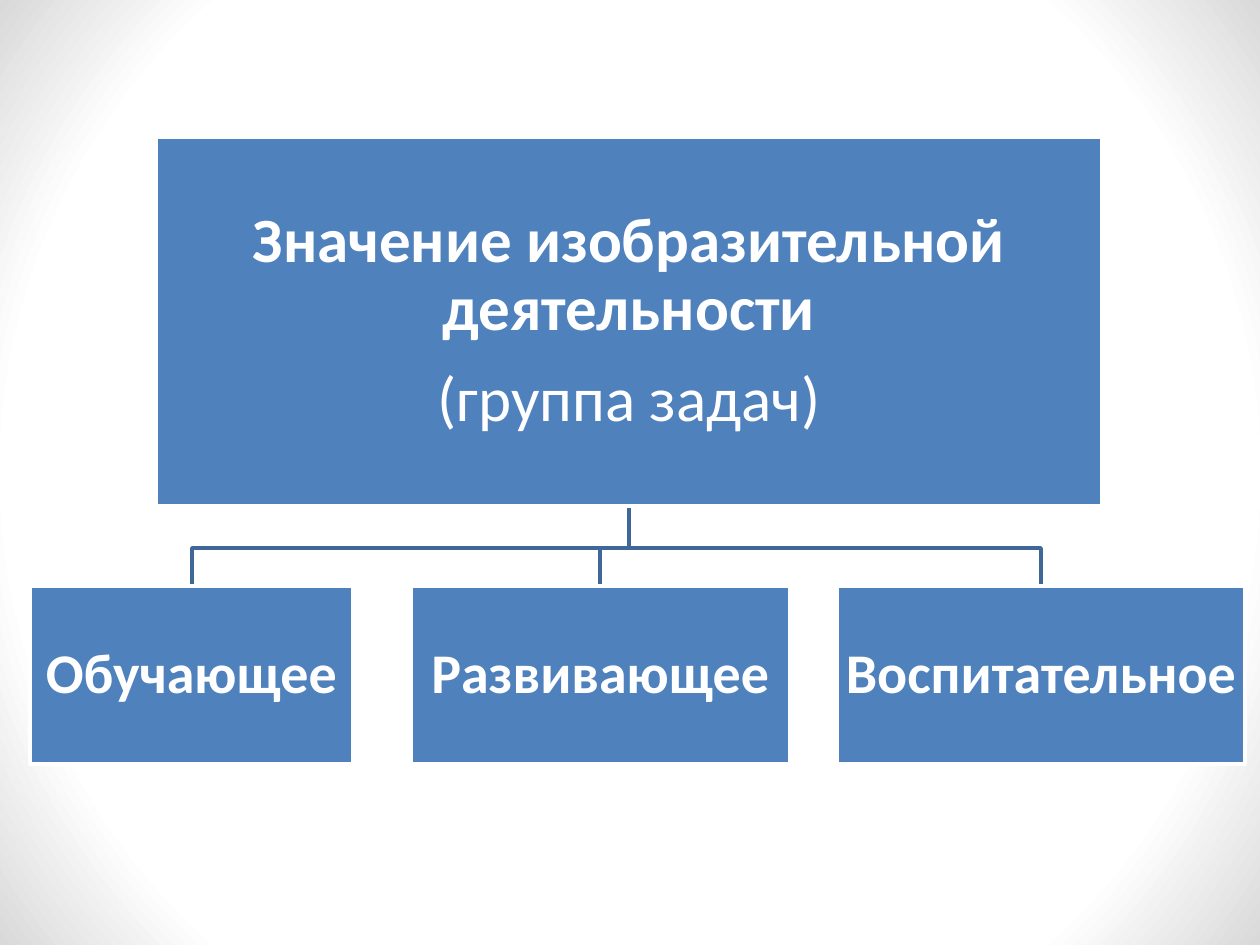
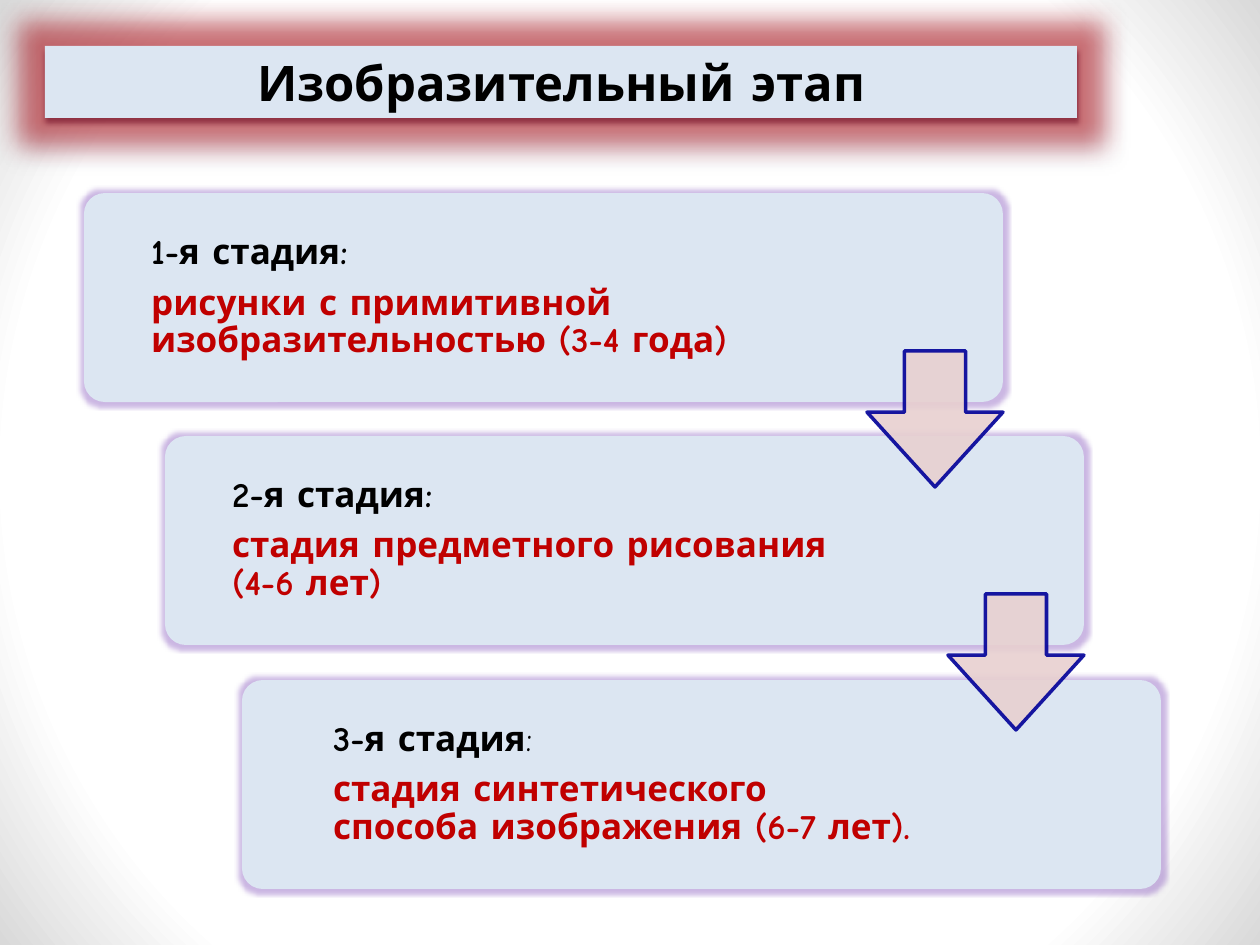
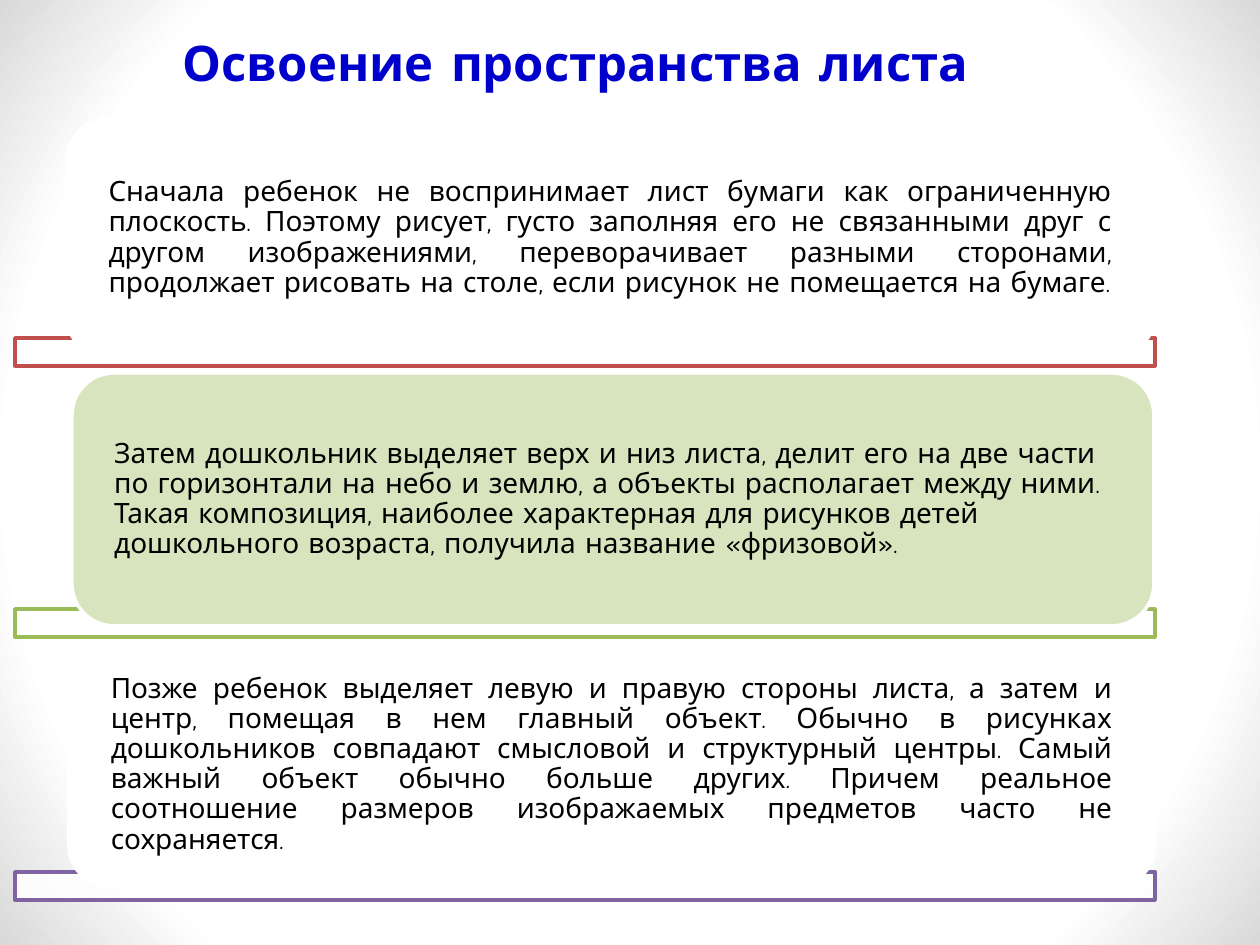
from lxml import etree
from pptx import Presentation
from pptx.dml.color import RGBColor
from pptx.enum.shapes import MSO_SHAPE
from pptx.enum.text import MSO_ANCHOR, MSO_AUTO_SIZE, PP_ALIGN
from pptx.oxml import parse_xml
from pptx.oxml.ns import nsdecls, qn
from pptx.util import Emu, Inches, Pt

RECT, ROUND, ARROW = MSO_SHAPE.RECTANGLE, MSO_SHAPE.ROUNDED_RECTANGLE, MSO_SHAPE.DOWN_ARROW
TOP, MIDDLE = MSO_ANCHOR.TOP, MSO_ANCHOR.MIDDLE
LEFT, CENTER, JUSTIFY = PP_ALIGN.LEFT, PP_ALIGN.CENTER, PP_ALIGN.JUSTIFY
NO_FIT = MSO_AUTO_SIZE.NONE

SCALE = 914400 / 126
TITLE_ONLY, BLANK = 5, 6
BODY_FONT, CHART_FONT = "Comic Neue", "Calibri"
C = {
    "white": "FFFFFF", "edge": "D9D9D9", "black": "000000",
    "blue": "4F81BD", "branch": "3F6797", "pale": "DCE6F2",
    "red": "C00000", "title": "0000CC", "arrow": "E8D0D0", "navy": "000099",
    "glow": "7F4DB9", "shadow": "4F3E64", "green": "D7E4BD",
    "bar_red": "C0504D", "bar_green": "9BBB59", "bar_purple": "8064A2",
}

STAGES = [
    (84, 193, 61, "1-я стадия", True,
     ["рисунки с примитивной", "изобразительностью (3-4 года)"]),
    (165, 436, 61, "2-я стадия", True,
     ["стадия предметного рисования", "(4-6 лет)"]),
    (242, 680, 85, "3-я стадия", False,
     ["стадия синтетического", "способа изображения (6-7 лет)."]),
]
STEPS = [
    ((67, 120, 1087, 236), "white", "bar_red", 338, JUSTIFY,
     "Сначала ребенок не воспринимает лист бумаги как ограниченную плоскость. "
     "Поэтому рисует, густо заполняя его не связанными друг с другом изображениями, "
     "переворачивает разными сторонами, продолжает рисовать на столе, "
     "если рисунок не помещается на бумаге."),
    ((72, 373, 1082, 253), "green", "bar_green", 609, LEFT,
     "Затем дошкольник выделяет верх и низ листа, делит его на две части по горизонтали "
     "на небо и землю, а объекты располагает между ними. Такая композиция, наиболее "
     "характерная для рисунков детей дошкольного возраста, получила название «фризовой»."),
    ((69, 643, 1086, 243), "white", "bar_purple", 872, JUSTIFY,
     "Позже ребенок выделяет левую и правую стороны листа, а затем и центр, помещая в нем "
     "главный объект. Обычно в рисунках дошкольников совпадают смысловой и структурный "
     "центры. Самый важный объект обычно больше других. Причем реальное соотношение "
     "размеров изображаемых предметов часто не сохраняется."),
]


def px(n):
    """Turn pixels into EMU."""
    return Emu(round(n * SCALE))


def rgb(name):
    """Look up a palette colour."""
    return RGBColor.from_string(C[name])


def set_alpha(element, percent):
    """Make every colour below the element partly transparent."""
    for color in element.iter(qn("a:srgbClr")):
        etree.SubElement(color, qn("a:alpha")).set("val", str(percent * 1000))


def add_effect(sp, tag, color, percent, **attrs):
    """Append a glow or shadow to the shape's effect list."""
    effect = etree.SubElement(sp.element.spPr.find(qn("a:effectLst")), qn(tag), attrs)
    etree.SubElement(effect, qn("a:srgbClr")).set("val", C[color])
    set_alpha(effect, percent)


def style(sp, fill=None, line=None):
    """Set a shape's flat fill and two-point outline."""
    sp.shadow.inherit = False
    if fill:
        sp.fill.solid()
        sp.fill.fore_color.rgb = rgb(fill)
    else:
        sp.fill.background()
    if line:
        sp.line.color.rgb = rgb(line)
        sp.line.width = Pt(2)
    else:
        sp.line.fill.background()


def add_box(s, kind, box, fill, line=None, adjust=()):
    """Add a styled preset shape."""
    sp = s.shapes.add_shape(kind, *map(px, box))
    style(sp, fill, line)
    for i, value in enumerate(adjust):
        sp.adjustments[i] = value
    return sp


def set_insets(tf, left, top, right, bottom):
    """Set the text margins."""
    tf.margin_left, tf.margin_top = px(left), px(top)
    tf.margin_right, tf.margin_bottom = px(right), px(bottom)


def format_run(r, font, size, color, bold):
    """Set the run's font."""
    r.font.name, r.font.size, r.font.bold = font, Pt(size), bold
    r.font.color.rgb = rgb(color)


def write(tf, lines, font, size, color, bold=False, align=LEFT):
    """Fill a frame with tightly set paragraphs."""
    tf.word_wrap = True
    tf.vertical_anchor = MIDDLE
    tf.text = "\n".join(lines)
    for p in tf.paragraphs:
        p.alignment = align
        p.line_spacing = 0.9
        for r in p.runs:
            format_run(r, font, size, color, bold)


def set_background(master):
    """Give the master a round gradient that darkens at the corners."""
    master.background.fill.solid()
    solid = master.element.find(".//" + qn("p:bgPr")).find(qn("a:solidFill"))
    gradient = parse_xml(
        f'<a:gradFill {nsdecls("a")} rotWithShape="1"><a:gsLst>'
        f'<a:gs pos="79000"><a:srgbClr val="{C["white"]}"/></a:gs>'
        f'<a:gs pos="100000"><a:srgbClr val="{C["edge"]}"/></a:gs></a:gsLst>'
        '<a:path path="circle"><a:fillToRect l="50000" t="50000" r="50000" b="50000"/>'
        '</a:path></a:gradFill>')
    solid.getparent().replace(solid, gradient)


def add_title(s, text, box, color):
    """Place the slide title in its placeholder."""
    title = s.shapes.title
    title.left, title.top, title.width, title.height = map(px, box)
    tf = title.text_frame
    tf.text = text
    tf.word_wrap, tf.auto_size, tf.vertical_anchor = True, NO_FIT, TOP
    p = tf.paragraphs[0]
    p.alignment = CENTER
    format_run(p.runs[0], BODY_FONT, 28, color, True)
    return title


def add_branch(s, x1, y1, x2, y2):
    """Draw a stepped line from the parent down to a child."""
    bend = y1 + 42
    builder = s.shapes.build_freeform(x1, y1, scale=SCALE)
    builder.add_line_segments([(x1, bend), (x2, bend), (x2, y2)], close=False)
    style(builder.convert_to_shape(), line="branch")


def add_hierarchy(s, box):
    """Draw the parent box with its three children."""
    x, y, w, h = box
    child_y = y + h + 80
    children = [("Обучающее", 30, 323), ("Развивающее", 411, 379),
                ("Воспитательное", 837, 408)]
    for _, left, width in reversed(children):
        add_branch(s, x + w / 2, y + h, left + width / 2, child_y)
    parent = add_box(s, RECT, box, "blue", "white")
    tf = parent.text_frame
    set_insets(tf, 4, 4, 4, 4)
    write(tf, ["Значение изобразительной деятельности", "(группа задач)"],
          CHART_FONT, 36, "white", True, CENTER)
    tf.paragraphs[0].space_after = Pt(12.6)
    tf.paragraphs[1].runs[0].font.bold = False
    for name, left, width in children:
        child = add_box(s, RECT, (left, child_y, width, 178), "blue", "white")
        set_insets(child.text_frame, 3, 3, 3, 3)
        write(child.text_frame, [name], CHART_FONT, 32, "white", True, CENTER)


def add_stage(s, box, inset, heading, bold_colon, lines):
    """Draw one glowing stage card."""
    card = add_box(s, ROUND, box, "pale", adjust=[0.1])
    add_effect(card, "a:glow", "glow", 40, rad=str(Pt(5)))
    tf = card.text_frame
    set_insets(tf, inset, 10, 10, 10)
    write(tf, [heading, *lines], BODY_FONT, 20, "red", True)
    p = tf.paragraphs[0]
    p.space_after = Pt(7)
    p.runs[0].font.color.rgb = rgb("black")
    r = p.add_run()
    r.text = ":"
    format_run(r, BODY_FONT, 20, "black", bold_colon)


def add_stages(s, width, height):
    """Draw the staircase of stages and the arrows between them."""
    for x, y, *content in STAGES:
        add_stage(s, (x, y, width, height), *content)
    size = 136
    for x, y, *_ in STAGES[:-1]:
        arrow = add_box(s, ARROW, (x + width - size, y + 158, size, size),
                        "arrow", "navy", [0.45, 0.55])
        set_alpha(arrow.element.spPr, 90)


def add_step(s, box, fill, bar_color, bar_y, align, text):
    """Draw a text card over its coloured bar."""
    bar = add_box(s, RECT, (15, bar_y, 1140, 28), "white", bar_color)
    set_alpha(bar.element.spPr.find(qn("a:solidFill")), 90)
    card = add_box(s, ROUND, box, fill, "white")
    set_insets(card.text_frame, 30, 0, 30, 0)
    write(card.text_frame, [text], BODY_FONT, 16, "black", align=align)


def hierarchy_slide(prs):
    """Build the slide with the groups of tasks."""
    s = prs.slides.add_slide(prs.slide_layouts[BLANK])
    add_hierarchy(s, (156, 137, 946, 369))


def stages_slide(prs):
    """Build the slide with the drawing stages."""
    s = prs.slides.add_slide(prs.slide_layouts[TITLE_ONLY])
    add_stages(s, 919, 209)
    title = add_title(s, "Изобразительный этап", (45, 46, 1032, 72), "black")
    style(title, "pale")
    add_effect(title, "a:glow", "red", 45, rad=str(Pt(30)))
    add_effect(title, "a:outerShdw", "shadow", 83, blurRad=str(Pt(3.1)),
               dist=str(Pt(2)), dir="5400000", rotWithShape="0")


def steps_slide(prs):
    """Build the slide on mastering the sheet."""
    s = prs.slides.add_slide(prs.slide_layouts[TITLE_ONLY])
    for step in STEPS:
        add_step(s, *step)
    add_title(s, "Освоение пространства листа", (84, 26, 983, 72), "title")


def main():
    """Build and save the presentation."""
    prs = Presentation()
    prs.slide_width, prs.slide_height = Inches(10), Inches(7.5)
    set_background(prs.slide_master)
    hierarchy_slide(prs)
    stages_slide(prs)
    steps_slide(prs)
    prs.save("out.pptx")


if __name__ == "__main__":
    main()
